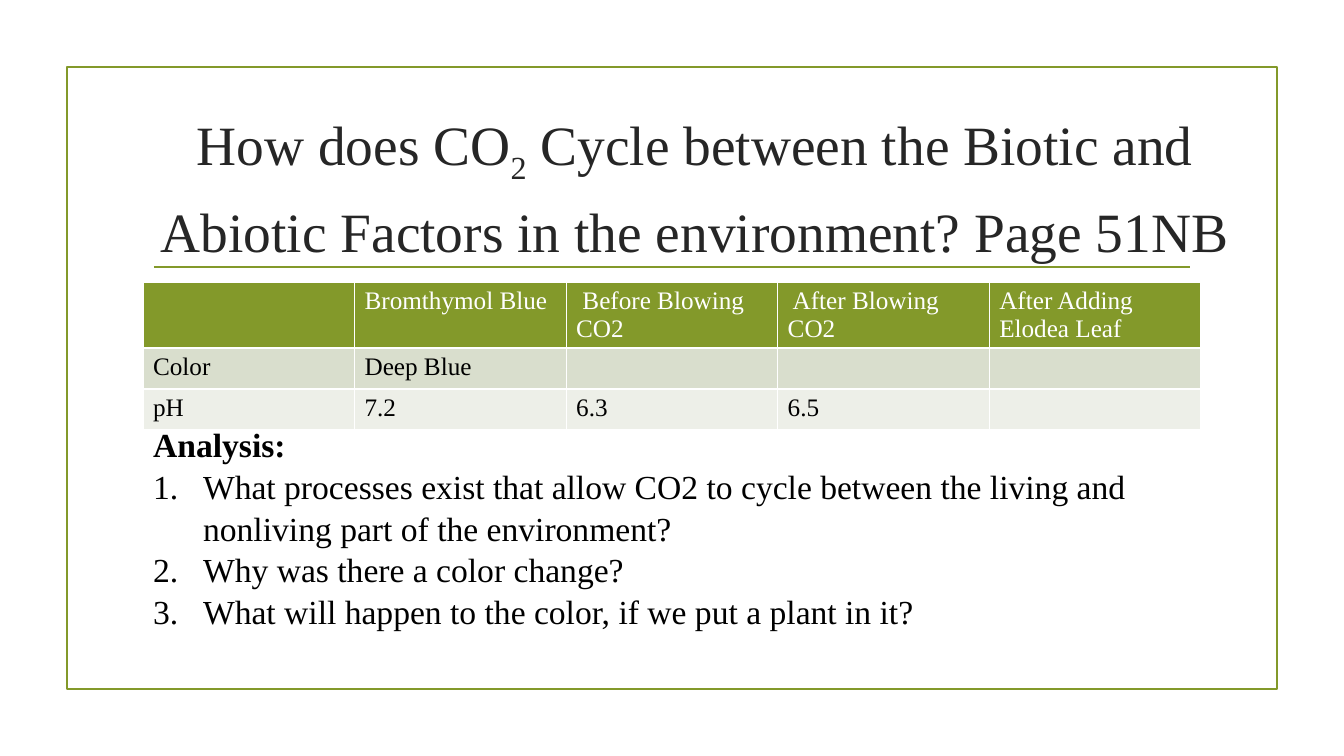
import pptx
import pptx.util
import pptx.dml.color
import pptx.enum.shapes
import pptx.enum.text
import pptx.oxml.ns
from lxml import etree

RGB = pptx.dml.color.RGBColor
GREEN = RGB(0x83, 0x99, 0x2A)
DARK = RGB(0x26, 0x26, 0x26)
BLACK = RGB(0, 0, 0)
WHITE = RGB(255, 255, 255)
ROW_FILLS = [GREEN, RGB(0xD9, 0xDE, 0xCD), RGB(0xED, 0xEF, 0xE8)]
FONT = "Times New Roman"

TITLE = [
    ("How does CO", False),
    ("2", True),
    (" Cycle between the Biotic and Abiotic Factors in the environment? Page 51NB", False),
]
RESULTS = [
    ["", "Bromthymol Blue", " Before Blowing CO2", " After Blowing CO2", "After Adding Elodea Leaf"],
    ["Color", "Deep Blue", "", "", ""],
    ["pH", "7.2", "6.3", "6.5", ""],
]
HEADING = "Analysis:"
QUESTIONS = [
    "What processes exist that allow CO2 to cycle between the living and nonliving part of the environment?",
    "Why was there a color change?",
    "What will happen to the color, if we put a plant in it?",
]

SLIDE_BOX = (1344, 756)
FRAME_BOX = (67, 67, 1210, 622)
TITLE_BOX = (143, 108, 1104, 144)
RULE = (154, 267, 1190, 267)
TABLE_BOX = (143, 282, 1058, 147)
ROW_HEIGHTS = [65, 41, 41]
BODY_BOX = (143, 417, 1056, 214)
HANG = 50


def px(n):
    return pptx.util.Emu(round(n * 12192000 / 1344))


def add(parent, tag, **attrs):
    return etree.SubElement(parent, pptx.oxml.ns.qn(tag), **attrs)


def place(sp, box):
    sp.left, sp.top, sp.width, sp.height = map(px, box)


def style(p, size, color, bold=False):
    f = p.font
    f.name, f.size, f.bold = FONT, pptx.util.Pt(size), bold
    f.color.rgb = color


def outline(line):
    line.color.rgb = GREEN
    line.width = pptx.util.Pt(1.25)


def add_frame(s):
    sp = s.shapes.add_shape(pptx.enum.shapes.MSO_SHAPE.RECTANGLE, *map(px, FRAME_BOX))
    sp.shadow.inherit = False
    sp.fill.background()
    outline(sp.line)
    rule = s.shapes.add_connector(pptx.enum.shapes.MSO_CONNECTOR.STRAIGHT, *map(px, RULE))
    outline(rule.line)
    add(rule.element.spPr, "a:effectLst")


def fill_title(sp):
    place(sp, TITLE_BOX)
    tf = sp.text_frame
    tf.auto_size = pptx.enum.text.MSO_AUTO_SIZE.NONE
    tf.vertical_anchor = pptx.enum.text.MSO_ANCHOR.MIDDLE
    p = tf.paragraphs[0]
    p.alignment = pptx.enum.text.PP_ALIGN.CENTER
    p.line_spacing = 1.18
    style(p, 39.6, DARK)
    for text, subscript in TITLE:
        r = p.add_run()
        r.text = text
        if subscript:
            r.font.element.set("baseline", "-25000") if hasattr(r.font, "element") else r._r.get_or_add_rPr().set("baseline", "-25000")


def add_borders(cell):
    props = cell._tc.get_or_add_tcPr()
    for side in ("a:lnL", "a:lnR", "a:lnT", "a:lnB"):
        ln = add(props, side, w="12700")
        add(add(ln, "a:solidFill"), "a:srgbClr", val=str(WHITE))


def add_results(s):
    table = s.shapes.add_table(len(RESULTS), len(RESULTS[0]), *map(px, TABLE_BOX)).table
    for col in table.columns:
        col.width = px(TABLE_BOX[2] / len(RESULTS[0]))
    for i, (texts, fill) in enumerate(zip(RESULTS, ROW_FILLS)):
        table.rows[i].height = px(ROW_HEIGHTS[i])
        for j, text in enumerate(texts):
            cell = table.cell(i, j)
            add_borders(cell)
            cell.fill.solid()
            cell.fill.fore_color.rgb = fill
            cell.text = text
            style(cell.text_frame.paragraphs[0], 18, BLACK if i else WHITE)


def fill_analysis(sp):
    place(sp, BODY_BOX)
    tf = sp.text_frame
    tf.auto_size = pptx.enum.text.MSO_AUTO_SIZE.NONE
    for i, text in enumerate([HEADING] + QUESTIONS):
        p = tf.add_paragraph() if i else tf.paragraphs[0]
        p.text = text
        p.space_before = pptx.util.Pt(0)
        p.line_spacing = 1.04
        props = p._p.get_or_add_pPr()
        hang = px(HANG) if i else 0
        props.set("marL", str(hang))
        props.set("indent", str(-hang))
        if i:
            add(props, "a:buFont", typeface="+mj-lt")
            add(props, "a:buAutoNum", type="arabicPeriod")
        else:
            add(props, "a:buNone")
        style(p, 24, BLACK, bold=not i)


def main():
    """Build the slide on the carbon dioxide cycle."""
    prs = pptx.Presentation()
    prs.slide_width, prs.slide_height = map(px, SLIDE_BOX)
    s = prs.slides.add_slide(prs.slide_layouts[1])
    title, body = s.placeholders
    add_frame(s)
    fill_title(title)
    add_results(s)
    fill_analysis(body)
    s.shapes.element.append(body.element)
    prs.save("out.pptx")


if __name__ == "__main__":
    main()
